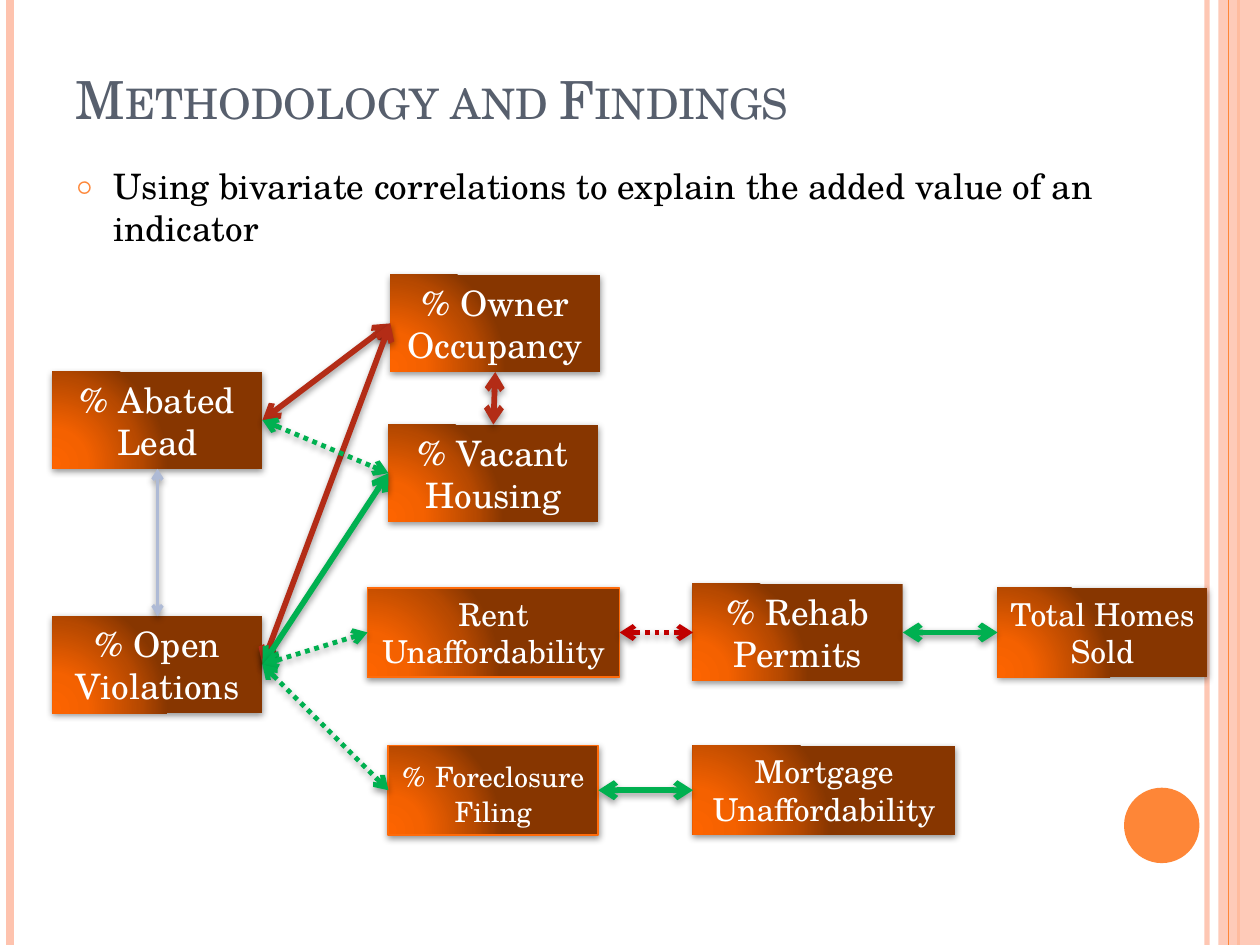
from dataclasses import dataclass

from lxml.etree import SubElement
from pptx import Presentation
from pptx.dml.color import RGBColor
from pptx.enum.dml import MSO_LINE
from pptx.enum.shapes import MSO_CONNECTOR, MSO_SHAPE
from pptx.enum.text import MSO_ANCHOR, MSO_AUTO_SIZE, PP_ALIGN
from pptx.oxml.ns import qn
from pptx.util import Cm, Pt


@dataclass(frozen=True)
class Theme:
    font: str = "TeX Gyre Schola"
    title: str = "575F6D"
    text: str = "000000"
    box_text: str = "FFFFFF"
    accent: str = "FE8637"
    band: str = "FEC3AE"
    box_line: str = "FF6B0A"
    gradient: tuple = ((0, "FD6400"), (30, "F46100"), (75, "B74900"), (100, "873600"))
    red: str = "B32C16"
    dark_red: str = "C00000"
    green: str = "00B050"
    pale_blue: str = "AEBAD5"
    title_size: float = 30
    body_size: float = 20
    large: float = 20
    medium: float = 18
    small: float = 16


T = Theme()
BOX_W = 4.23
BOX_H = {T.large: 1.96, T.medium: 1.8, T.small: 1.8}
TOP, LEFT, BOTTOM, RIGHT = range(4)

# name: (runs, left, row centre, width, outlined), in cm within the diagram
BOXES = {
    "lead": ([("% Abated Lead", T.large)], 0, 2.93, BOX_W, False),
    "open": ([("% Open Violations", T.large)], 0, 7.86, BOX_W, False),
    "rehab": ([("% Rehab Permits", T.large)], 12.91, 7.21, BOX_W, False),
    "homes": ([("Total Homes Sold", T.medium)], 19.05, 7.21, BOX_W, False),
    "rent": ([("Rent Unaffordability", T.medium)], 6.35, 7.21, 5.08, True),
    "vacant": ([("% Vacant Housing", T.large)], 6.77, 4.0, BOX_W, False),
    "mortgage": ([("Mortgage Unaffordability", T.medium)], 12.91, 10.39, 5.29, False),
    "owner": ([("% Owner Occupancy", T.large)], 6.81, 0.98, BOX_W, False),
    "foreclosure": ([("%", T.small), (" ", T.large), ("Foreclosure Filing", T.small)],
                    6.77, 10.39, BOX_W, True),
}

# from, side, to, side, colour, width, dotted
LINKS = [
    ("lead", BOTTOM, "open", TOP, T.pale_blue, 2, False),
    ("lead", RIGHT, "owner", LEFT, T.red, 3.25, False),
    ("open", RIGHT, "owner", LEFT, T.red, 3.25, False),
    ("lead", RIGHT, "vacant", LEFT, T.green, 2.75, True),
    ("open", RIGHT, "vacant", LEFT, T.green, 3.25, False),
    ("vacant", TOP, "owner", BOTTOM, T.red, 3.25, False),
    ("open", RIGHT, "rent", LEFT, T.green, 2.75, True),
    ("open", RIGHT, "foreclosure", LEFT, T.green, 2.75, True),
    ("foreclosure", RIGHT, "mortgage", LEFT, T.green, 3.25, False),
    ("rent", RIGHT, "rehab", LEFT, T.dark_red, 2.75, True),
    ("rehab", RIGHT, "homes", LEFT, T.green, 3.25, False),
]


def add_xml(parent, tag, **attrs):
    return SubElement(parent, qn(tag), {k: str(v) for k, v in attrs.items()})


def set_alpha(fill_parent, percent):
    color = next(fill_parent.iter(qn("a:srgbClr")))
    add_xml(color, "a:alpha", val=percent * 1000)


def set_effects(sp, alpha=None, dist=0):
    """Replace the style's effects with none, or with a soft shadow below."""
    effects = add_xml(sp._element.spPr, "a:effectLst")
    if alpha:
        shadow = add_xml(effects, "a:outerShdw", blurRad=Pt(4), dist=Pt(dist),
                         dir=5400000, rotWithShape=0)
        color = add_xml(shadow, "a:srgbClr", val="000000")
        add_xml(color, "a:alpha", val=alpha * 1000)


def format_run(r, size, color):
    for name, value in {"name": T.font, "size": Pt(size)}.items():
        setattr(r.font, name, value)
    r.font.color.rgb = RGBColor.from_string(color)


def add_line(s, color, width, start=(0, 0), end=(0, 0)):
    line = s.shapes.add_connector(MSO_CONNECTOR.STRAIGHT,
                                  *(Cm(v) for v in (*start, *end)))
    line.line.color.rgb = RGBColor.from_string(color)
    line.line.width = Pt(width)
    return line


def add_solid(s, kind, box, color):
    sp = s.shapes.add_shape(kind, *(Cm(v) for v in box))
    sp.fill.solid()
    sp.fill.fore_color.rgb = RGBColor.from_string(color)
    sp.line.fill.background()
    sp.shadow.inherit = False
    return sp


def add_frame(s, box):
    """Vertical bands at both edges and the disc at the lower right."""
    left, top, width, height = box

    def rule(x, color, size):
        line = add_line(s, color, size, (left + x, top), (left + x, top + height))
        set_effects(line)
        return line

    set_alpha(rule(24.33, T.band, 3)._element.spPr, 93)
    rule(0.2, T.band, 4.5)
    rule(24.97, T.accent, 1.5)
    band = add_solid(s, MSO_SHAPE.RECTANGLE,
                     (left + 24.56, top, width - 24.56, height), T.band)
    set_alpha(band._element.spPr, 87)
    rule(24.77, T.accent, 0.75)
    add_solid(s, MSO_SHAPE.OVAL, (left + 22.66, top + 15.88, 1.52, 1.52), T.accent)


def fill_placeholder(sp, box, text, size, color, anchor):
    for name, value in zip(("left", "top", "width", "height"), box):
        setattr(sp, name, Cm(value))
    tf = sp.text_frame
    for name, value in {"word_wrap": True, "auto_size": MSO_AUTO_SIZE.NONE,
                        "vertical_anchor": anchor}.items():
        setattr(tf, name, value)
    p = tf.paragraphs[0]
    p.alignment = PP_ALIGN.LEFT
    r = p.add_run()
    r.text = text
    format_run(r, size, color)
    return p, r


def add_title(s, box):
    _, r = fill_placeholder(s.shapes.title, box, "Methodology and Findings",
                            T.title_size, T.title, MSO_ANCHOR.BOTTOM)
    r.font._element.set("cap", "small")


def add_body(s, box):
    text = "Using bivariate correlations to explain the added value of an indicator"
    p, _ = fill_placeholder(s.placeholders[1], box, text,
                            T.body_size, T.text, MSO_ANCHOR.TOP)
    p.space_before = Pt(6)
    pPr = p._p.get_or_add_pPr()
    pPr.set("marL", str(Cm(0.76)))
    pPr.set("indent", str(-Cm(0.76)))
    add_xml(add_xml(pPr, "a:buClr"), "a:srgbClr", val=T.accent)
    add_xml(pPr, "a:buSzPct", val=70000)
    add_xml(pPr, "a:buFont", typeface=T.font)
    add_xml(pPr, "a:buChar", char="○")


def add_box(s, runs, left, centre, width, outlined):
    height = BOX_H[runs[0][1]]
    sp = s.shapes.add_shape(MSO_SHAPE.RECTANGLE, Cm(left), Cm(centre - height / 2),
                            Cm(width), Cm(height))
    grad = add_xml(sp._element.spPr, "a:gradFill", rotWithShape=1)
    stops = add_xml(grad, "a:gsLst")
    for pos, color in T.gradient:
        add_xml(add_xml(stops, "a:gs", pos=pos * 1000), "a:srgbClr", val=color)
    focus = add_xml(grad, "a:path", path="circle")
    add_xml(focus, "a:fillToRect", l=5000, t=100000, r=120000, b=10000)
    if outlined:
        sp.line.color.rgb = RGBColor.from_string(T.box_line)
        sp.line.width = Pt(1)
    else:
        sp.line.fill.background()
    set_effects(sp, alpha=42, dist=1.6)
    tf = sp.text_frame
    tf.word_wrap = True
    p = tf.paragraphs[0]
    p.alignment = PP_ALIGN.CENTER
    for text, size in runs:
        r = p.add_run()
        r.text = text
        format_run(r, size, T.box_text)
    return sp


def add_diagram(s, left, top):
    boxes = {name: add_box(s, runs, left + x, top + y, width, outlined)
             for name, (runs, x, y, width, outlined) in BOXES.items()}
    for start, side, end, end_side, color, width, dotted in LINKS:
        link = add_line(s, color, width)
        link.begin_connect(boxes[start], side)
        link.end_connect(boxes[end], end_side)
        if dotted:
            link.line.dash_style = MSO_LINE.ROUND_DOT
        ln = link.line._get_or_add_ln()
        for tag in ("a:headEnd", "a:tailEnd"):
            add_xml(ln, tag, type="arrow")
        set_effects(link, alpha=40, dist=2)


def main():
    prs = Presentation()
    prs.slide_width, prs.slide_height = Cm(25.4), Cm(19.05)
    s = prs.slides.add_slide(prs.slide_layouts[1])
    add_frame(s, (0, 0, 25.4, 19.05))
    add_title(s, (1.27, 0.76, 20.75, 1.98))
    add_body(s, (1.27, 3.18, 21.16, 2.11))
    add_diagram(s, 1.06, 5.54)
    prs.save("out.pptx")


if __name__ == "__main__":
    main()
